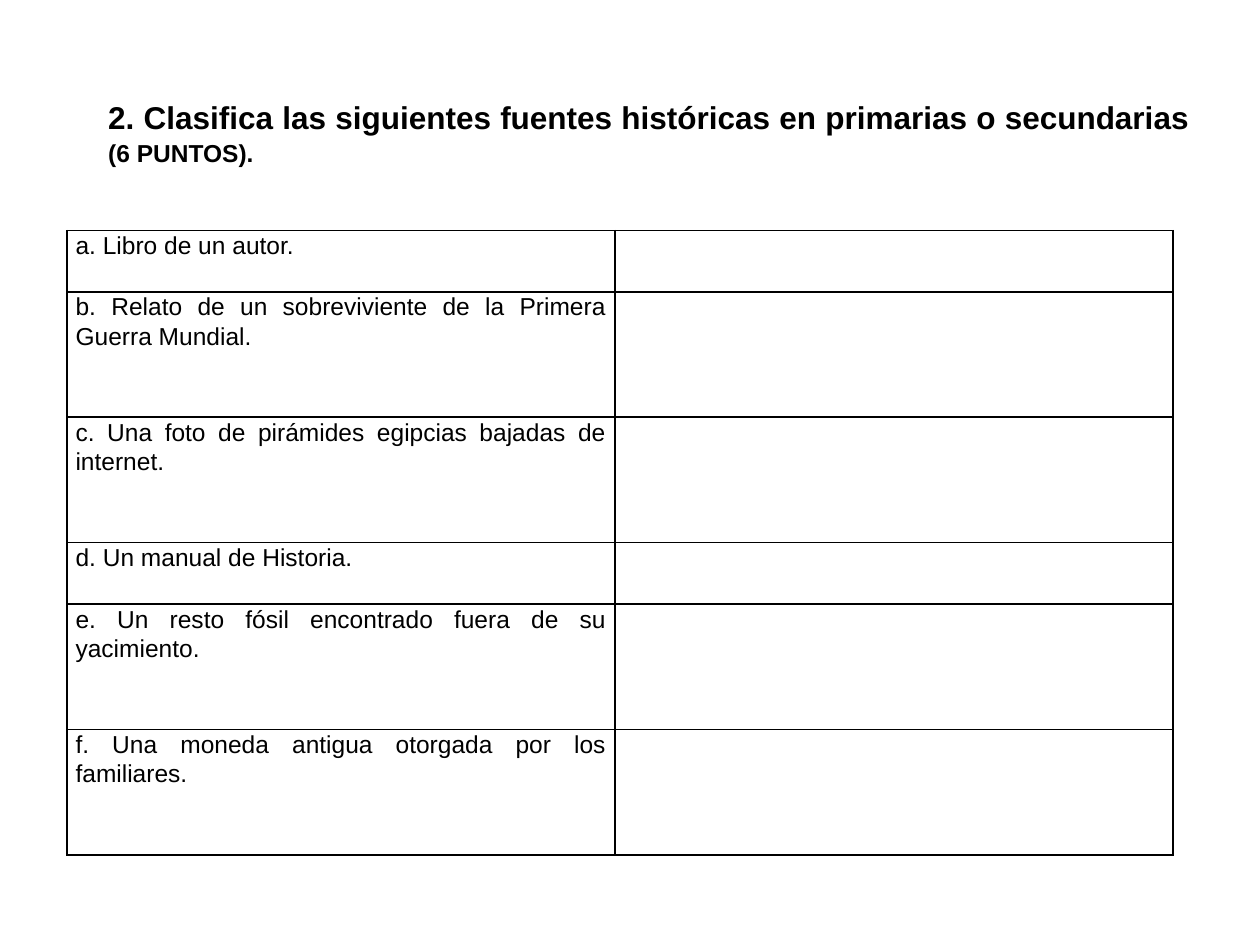
from dataclasses import dataclass

from lxml import etree
from pptx import Presentation
from pptx.dml.color import RGBColor
from pptx.enum.text import MSO_ANCHOR, PP_ALIGN
from pptx.oxml.ns import qn
from pptx.util import Inches, Pt

JUSTIFY = PP_ALIGN.JUSTIFY
BOTTOM = MSO_ANCHOR.BOTTOM
BLANK_LAYOUT = 6
GRID_COLUMNS, GRID_ROWS = 100, 75


@dataclass(frozen=True)
class Theme:
    font: str = "Arial"
    ink: str = "000000"
    paper: str = "FFFFFF"
    question_size: int = 18
    body_size: int = 14
    line_spacing: float = 1.07
    space_after: int = 10
    border: int = 1
    cell_inset: float = 0.07


class Worksheet:
    """Places elements on a slide by grid columns and rows."""

    def __init__(self, deck, theme):
        self.theme = theme
        self.slide = deck.slides.add_slide(deck.slide_layouts[BLANK_LAYOUT])
        self.column = deck.slide_width / GRID_COLUMNS
        self.row = deck.slide_height / GRID_ROWS

    def area(self, left, top, width, height):
        return (round(left * self.column), round(top * self.row),
                round(width * self.column), round(height * self.row))

    def style_run(self, run, size, bold=False):
        run.font.name = self.theme.font
        run.font.size = Pt(size)
        run.font.bold = bold
        run.font.color.rgb = RGBColor.from_string(self.theme.ink)

    def style_paragraph(self, paragraph):
        paragraph.alignment = JUSTIFY
        paragraph.line_spacing = self.theme.line_spacing

    def heading(self, parts, *place):
        frame = self.slide.shapes.add_textbox(*self.area(*place)).text_frame
        frame.word_wrap = True
        frame.vertical_anchor = BOTTOM
        question = frame.paragraphs[0]
        self.style_paragraph(question)
        for words, size in parts:
            run = question.add_run()
            run.text = words
            self.style_run(run, size, bold=True)

    def outline(self, cell):
        properties = cell._tc.get_or_add_tcPr()
        for side in ("a:lnL", "a:lnR", "a:lnT", "a:lnB"):
            line = etree.SubElement(properties, qn(side), w=str(Pt(self.theme.border)))
            fill = etree.SubElement(line, qn("a:solidFill"))
            etree.SubElement(fill, qn("a:srgbClr"), val=self.theme.ink)

    def style_cell(self, cell):
        cell.margin_left = cell.margin_right = Inches(self.theme.cell_inset)
        cell.margin_top = cell.margin_bottom = 0
        self.outline(cell)
        cell.fill.solid()
        cell.fill.fore_color.rgb = RGBColor.from_string(self.theme.paper)
        for paragraph in cell.text_frame.paragraphs:
            self.style_paragraph(paragraph)
            paragraph.space_after = Pt(self.theme.space_after)
            for run in paragraph.runs:
                self.style_run(run, self.theme.body_size)

    def answer_table(self, sources, left, top, widths, heights):
        place = self.area(left, top, sum(widths), sum(heights))
        table = self.slide.shapes.add_table(len(sources), len(widths), *place).table
        for table_column, width in zip(table.columns, widths):
            table_column.width = round(width * self.column)
        for index, (source, height) in enumerate(zip(sources, heights)):
            table.rows[index].height = round(height * self.row)
            table.cell(index, 0).text_frame.text = source
        for cell in table.iter_cells():
            self.style_cell(cell)


def main():
    deck = Presentation()
    deck.slide_width, deck.slide_height = Inches(10), Inches(7.5)
    theme = Theme()
    sheet = Worksheet(deck, theme)

    # Sources to classify, with short and tall answer rows
    short, tall = 4.86, 9.96
    sources = {
        "a. Libro de un autor.": short,
        "b. Relato de un sobreviviente de la Primera Guerra Mundial.": tall,
        "c. Una foto de pirámides egipcias bajadas de internet.": tall,
        "d. Un manual de Historia.": short,
        "e. Un resto fósil encontrado fuera de su yacimiento.": tall,
        "f. Una moneda antigua otorgada por los familiares.": tall,
    }
    sheet.answer_table(list(sources), 5.3, 18.3, (43.5, 44.3), list(sources.values()))

    # Question and its score
    sheet.heading([
        ("2. Clasifica las siguientes fuentes históricas en primarias o secundarias ",
         theme.question_size),
        ("(6 PUNTOS).", theme.body_size),
    ], 7.6, 2.5, 87.8, 11.3)

    deck.save("out.pptx")


if __name__ == "__main__":
    main()
